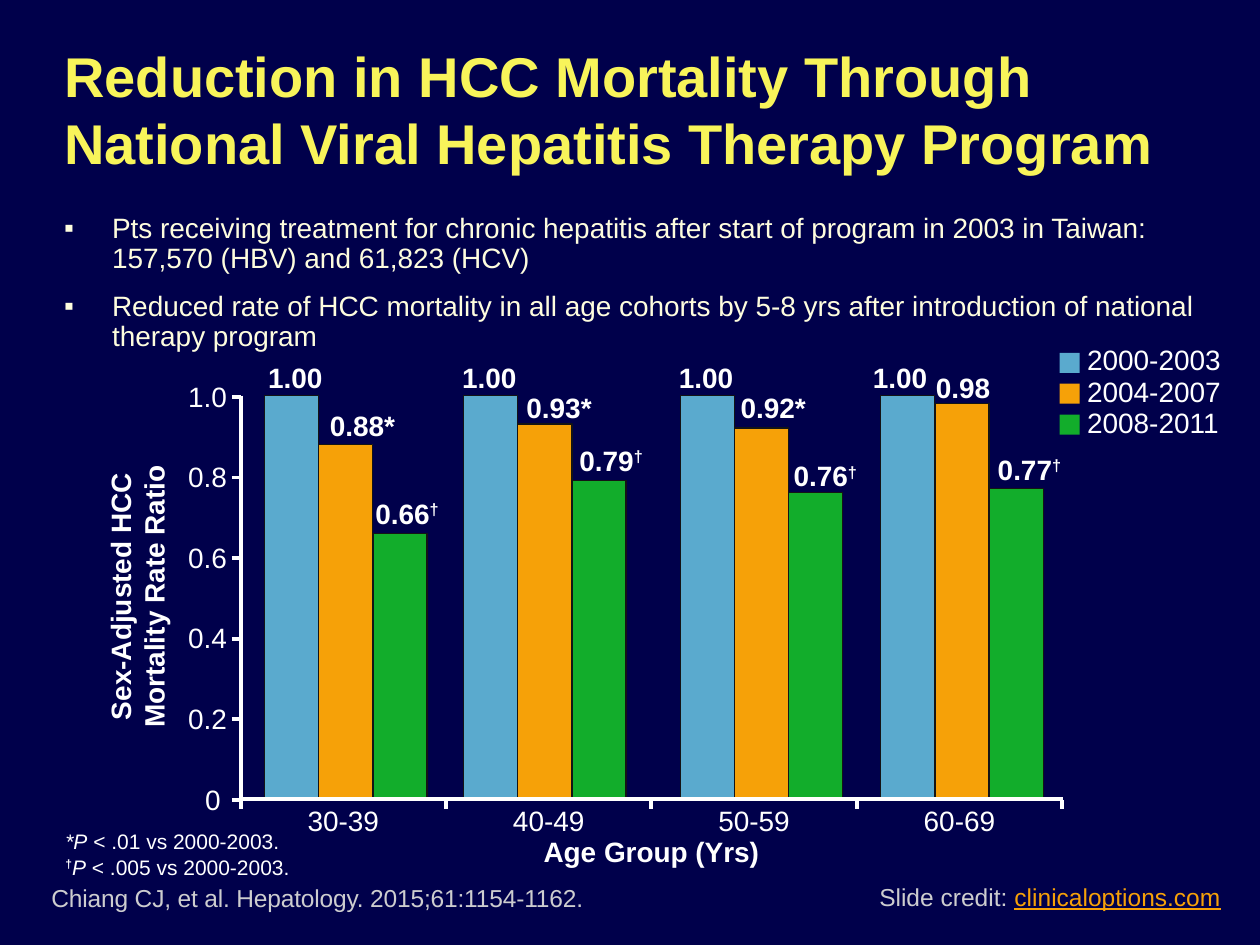
from lxml import etree
from pptx import Presentation
from pptx import util as u
from pptx.dml.color import RGBColor
from pptx.enum import shapes, text
from pptx.oxml import ns

INK = {"back": "00004B", "title": "F8F45A", "body": "FEFDDE", "white": "FFFFFF",
       "grey": "CDCDCF", "edge": "141415", "blue": "5AAACE",
       "gold": "F6A108", "green": "12AD2B"}
LEFT, CENTER, RIGHT = text.PP_ALIGN.LEFT, text.PP_ALIGN.CENTER, text.PP_ALIGN.RIGHT
TOP, MID, LOW = (text.MSO_ANCHOR.TOP, text.MSO_ANCHOR.MIDDLE,
                 text.MSO_ANCHOR.BOTTOM)


def shade(name):
    return RGBColor.from_string(INK[name])


def write(para, words, size=16, color="white", bold=False, italic=False,
          under=False, sup=False, track=0):
    run = para.add_run()
    run.text = words
    font = run.font
    font.name, font.size, font.color.rgb = "Arial", u.Pt(size), shade(color)
    font.bold, font.italic, font.underline = bold, italic, under
    if sup:
        run._r.get_or_add_rPr().set("baseline", "30000")
    if track:
        run._r.get_or_add_rPr().set("spc", str(track))


class Deck:
    def __init__(self):
        self.file = Presentation()
        self.file.slide_width, self.file.slide_height = u.Inches(10), u.Inches(7.5)
        self.slide = self.file.slides.add_slide(self.file.slide_layouts[1])
        fill = self.slide.background.fill
        fill.solid()
        fill.fore_color.rgb = shade("back")

    def place(self, item, box):
        item.left, item.top, item.width, item.height = map(u.Inches, box)
        frame = item.text_frame
        frame.auto_size = text.MSO_AUTO_SIZE.NONE
        frame.word_wrap = True
        return frame

    def title(self, words, box):
        frame = self.place(self.slide.shapes.title, box)
        frame.vertical_anchor = MID
        para = frame.paragraphs[0]
        para.alignment = LEFT
        write(para, words, size=32, color="title", bold=True)

    def bullets(self, items, box):
        frame = self.place(self.slide.placeholders[1], box)
        for num, words in enumerate(items):
            para = frame.add_paragraph() if num else frame.paragraphs[0]
            prop = para._p.get_or_add_pPr()
            prop.set("marL", str(u.Inches(0.38)))
            prop.set("indent", str(u.Inches(-0.38)))
            para.line_spacing = 0.9
            para.space_before = u.Pt(10 if num else 0)
            tint = etree.SubElement(prop, ns.qn("a:buClr"))
            etree.SubElement(tint, ns.qn("a:srgbClr"), val=INK["body"])
            etree.SubElement(prop, ns.qn("a:buFont"), typeface="Arial")
            etree.SubElement(prop, ns.qn("a:buChar"), char="▪")
            write(para, words, color="body")

    def label(self, lines, box, align=LEFT, anchor=TOP, wrap=True, turn=0, **style):
        item = self.slide.shapes.add_textbox(*map(u.Inches, box))
        item.rotation = turn
        frame = item.text_frame
        frame.word_wrap, frame.vertical_anchor = wrap, anchor
        if isinstance(lines, str):
            lines = [[(line, {})] for line in lines.split("\n")]
        for num, runs in enumerate(lines):
            para = frame.add_paragraph() if num else frame.paragraphs[0]
            para.alignment = align
            for words, extra in runs:
                write(para, words, **{**style, **extra})

    def block(self, box, color, edge=None):
        item = self.slide.shapes.add_shape(shapes.MSO_SHAPE.RECTANGLE,
                                           *map(u.Inches, box))
        item.shadow.inherit = False
        item.fill.solid()
        item.fill.fore_color.rgb = shade(color)
        if edge:
            item.line.color.rgb, item.line.width = shade(edge), u.Pt(0.75)
        else:
            item.line.fill.background()

    def rule(self, *ends):
        item = self.slide.shapes.add_connector(shapes.MSO_CONNECTOR.STRAIGHT,
                                               *map(u.Inches, ends))
        item.line.color.rgb, item.line.width = shade("white"), u.Pt(2.25)
        etree.SubElement(item._element.spPr, ns.qn("a:effectLst"))


BASE, TALL, WIDE = 6.35, 3.21, 0.43
AXIS, SPAN = 1.91, 1.63
SERIES = [("2000-2003", "blue"), ("2004-2007", "gold"), ("2008-2011", "green")]
GROUPS = [
    ("30-39", 2.1, [(1.00, "", 2.03, 2.81), (0.88, "*", 2.52, 3.19),
                    (0.66, "†", 2.88, 3.89)]),
    ("40-49", 3.68, [(1.00, "", 3.57, 2.81), (0.93, "*", 4.08, 3.05),
                     (0.79, "†", 4.5, 3.47)]),
    ("50-59", 5.4, [(1.00, "", 5.29, 2.81), (0.92, "*", 5.78, 3.05),
                    (0.76, "†", 6.2, 3.59)]),
    ("60-69", 6.99, [(1.00, "", 6.83, 2.81), (0.98, "", 7.33, 2.89),
                     (0.77, "†", 7.82, 3.54)]),
]


def chart(deck):
    for num, (ages, left, bars) in enumerate(GROUPS):
        for col, (value, mark, x, y) in enumerate(bars):
            high = TALL * value
            deck.block((left + col * WIDE, BASE - high, WIDE, high),
                       SERIES[col][1], "edge")
            deck.label([[(f"{value:.2f}", {}), (mark, {"sup": mark == "†"})]]
                       if mark else f"{value:.2f}",
                       (x, y, 0.72 if mark else 0.64, 0.37), wrap=False, bold=True)
        deck.label(ages, (AXIS + num * SPAN, 6.37, SPAN, 0.32), CENTER, LOW)
    deck.rule(AXIS, BASE - TALL, AXIS, BASE)
    deck.rule(AXIS, 6.34, 8.44, 6.34)
    for num in range(len(GROUPS) + 1):
        x = AXIS + num * SPAN
        deck.rule(x, BASE, x, 6.42)
    for num, words in enumerate(["0", "0.2", "0.4", "0.6", "0.8", "1.0"]):
        y = BASE - num * 0.64
        deck.rule(1.84, y, AXIS, y)
        deck.label(words, (1.39, y - 0.19, 0.51 if num else 0.46, 0.37), RIGHT,
                   wrap=False)
    deck.label("Sex-Adjusted HCC\nMortality Rate Ratio", (-0.52, 4.47, 3.21, 0.53),
               CENTER, MID, turn=270, bold=True)
    deck.label("Age Group (Yrs)", (AXIS, 6.61, 6.52, 0.29), CENTER, MID, bold=True)
    for num, (years, color) in enumerate(SERIES):
        deck.label(years, (8.53, 2.67 + num * 0.25, 1.34, 0.37))
        deck.block((8.41, 2.8 + num * 0.245, 0.16, 0.16), color)


def main():
    deck = Deck()
    deck.title("Reduction in HCC Mortality Through National Viral Hepatitis "
               "Therapy Program", (0.41, 0.26, 9.23, 1.21))
    deck.bullets(["Pts receiving treatment for chronic hepatitis after start of "
                  "program in 2003 in Taiwan: 157,570 (HBV) and 61,823 (HCV)",
                  "Reduced rate of HCC mortality in all age cohorts by 5-8 yrs "
                  "after introduction of national therapy program"],
                 (0.41, 1.65, 9.25, 1.21))
    chart(deck)
    slant = {"italic": True}
    deck.label([[("*P", slant), (" < .01 vs 2000-2003.", {})],
                [("†", {"bold": True, "sup": True}), ("P", slant),
                 (" < .005 vs 2000-2003.", {})]], (0.42, 6.53, 2.28, 0.5), size=12)
    deck.label("Chiang CJ, et al. Hepatology. 2015;61:1154-1162.",
               (0.31, 6.95, 6.44, 0.34), anchor=LOW, size=14, color="grey", track=-10)
    deck.label([[("Slide credit: ", {}),
                 ("clinicaloptions.com", {"color": "gold", "under": True})]],
               (6.88, 6.95, 2.92, 0.34), wrap=False, size=14, color="grey")
    deck.file.save("out.pptx")


if __name__ == "__main__":
    main()
